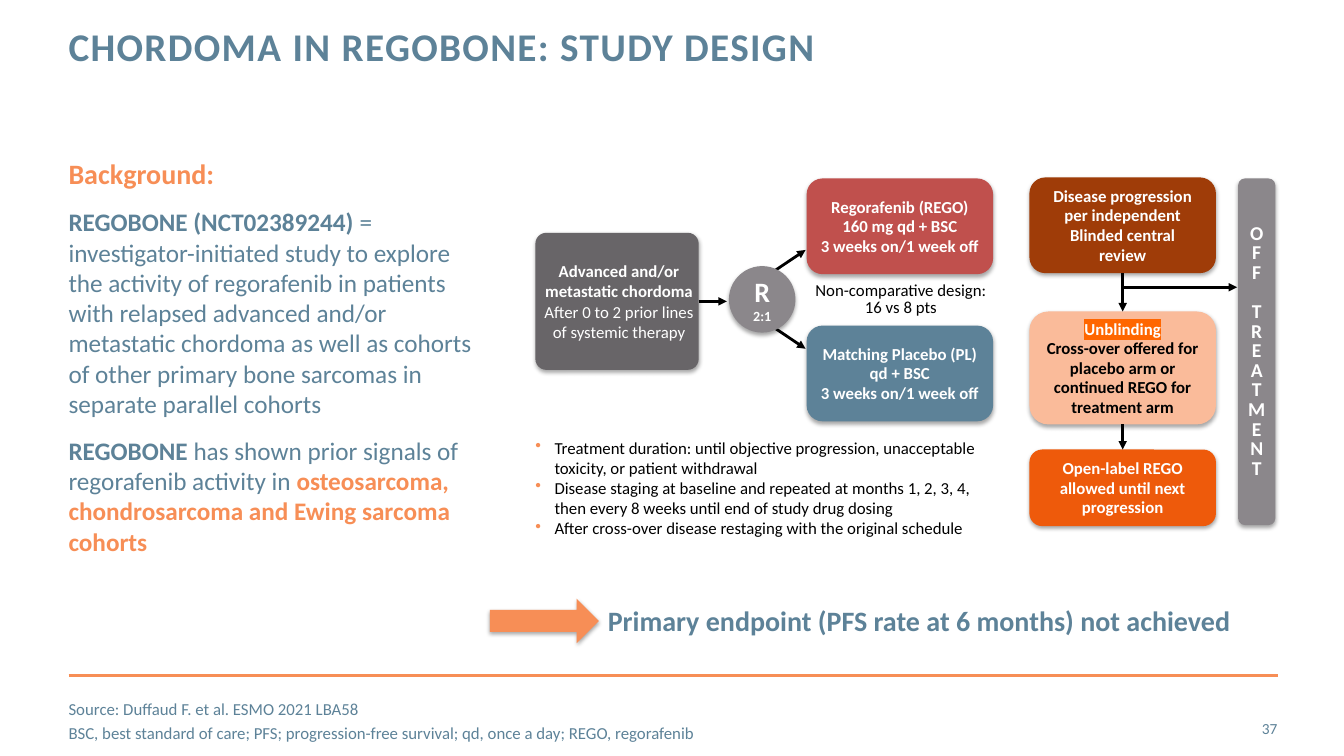
from dataclasses import dataclass

from lxml import etree
from pptx import Presentation
from pptx.dml.color import RGBColor
from pptx.enum.shapes import MSO_CONNECTOR, MSO_SHAPE
from pptx.enum.text import MSO_ANCHOR, PP_ALIGN
from pptx.oxml.ns import qn
from pptx.util import Inches, Pt

STRAIGHT = MSO_CONNECTOR.STRAIGHT
ROUNDED = MSO_SHAPE.ROUNDED_RECTANGLE
OVAL = MSO_SHAPE.OVAL
RIGHT_ARROW = MSO_SHAPE.RIGHT_ARROW
MIDDLE = MSO_ANCHOR.MIDDLE
CENTER = PP_ALIGN.CENTER
RIGHT = PP_ALIGN.RIGHT
TOP_SIDE, BOTTOM_SIDE, RIGHT_SIDE = 0, 2, 3


@dataclass(frozen=True)
class Theme:
    font: str = "Calibri"
    slate: str = "5D8298"
    orange: str = "F78E56"
    red: str = "C0504D"
    gray: str = "8B878B"
    dark_gray: str = "686568"
    rust: str = "9F3C08"
    peach: str = "FABB9A"
    vivid: str = "EE5A0B"
    highlight: str = "FF6600"
    white: str = "FFFFFF"
    black: str = "000000"
    title: int = 28
    heading: int = 20
    body: int = 18
    letter: int = 14
    label: int = 12
    page: int = 11
    ratio: int = 10


THEME = Theme()
NO_INSETS = (0, 0, 0, 0)
BOX_LINES = {"alignment": CENTER, "line_spacing": Pt(14)}
BOLD_WHITE = {"size": THEME.label, "color": THEME.white, "bold": True}


def apply(target, values):
    for name, value in values.items():
        setattr(target, name, value)


def add_color(parent, tag, color, **attributes):
    holder = etree.SubElement(parent, qn(tag), **attributes)
    return etree.SubElement(holder, qn("a:srgbClr"), val=color)


def add_run(paragraph, text, size, color, bold=False, highlight=None, tracking=None):
    for index, line in enumerate(text.split("\n")):
        if index:
            paragraph.add_line_break()
            line_break = paragraph._p.findall(qn("a:br"))[-1]
            etree.SubElement(line_break, qn("a:rPr"), sz=str(size * 100))
        if not line:
            continue
        run = paragraph.add_run()
        run.text = line
        run.font.color.rgb = RGBColor.from_string(color)
        properties = run.font._element
        if highlight:
            add_color(properties, "a:highlight", highlight)
        if tracking:
            properties.set("spc", str(tracking * 100))
        apply(run.font, {"size": Pt(size), "bold": bold, "name": THEME.font})


def add_bullet(paragraph):
    properties = paragraph._p.get_or_add_pPr()
    indent = Inches(0.19)
    properties.set("marL", str(indent))
    properties.set("indent", str(-indent))
    add_color(properties, "a:buClr", THEME.orange)
    etree.SubElement(properties, qn("a:buChar"), char="•")


def write(frame, paragraphs, style, layout=None, gap=0, insets=None, bullets=False, **frame_format):
    apply(frame, {"word_wrap": True, **frame_format})
    if insets is not None:
        sides = ("margin_left", "margin_top", "margin_right", "margin_bottom")
        apply(frame, {side: Inches(inset) for side, inset in zip(sides, insets)})
    for index, runs in enumerate(paragraphs):
        paragraph = frame.add_paragraph() if index else frame.paragraphs[0]
        if bullets:
            add_bullet(paragraph)
        apply(paragraph, layout or {})
        if index and gap:
            paragraph.space_before = Pt(gap)
        for text, changes in runs:
            add_run(paragraph, text, **{**style, **changes})


def plain(*texts):
    return [[(text, {})] for text in texts]


def add_text(slide, at, paragraphs, style, **options):
    box = slide.shapes.add_textbox(*map(Inches, at))
    write(box.text_frame, paragraphs, style, **options)


def add_block(slide, kind, at, fill, corner=None):
    block = slide.shapes.add_shape(kind, *map(Inches, at))
    block.fill.solid()
    block.fill.fore_color.rgb = RGBColor.from_string(fill)
    block.line.fill.background()
    block.shadow.inherit = False
    if corner is not None:
        block.adjustments[0] = corner
    effects = block._element.spPr.find(qn("a:effectLst"))
    shade = add_color(effects, "a:outerShdw", THEME.black, blurRad=str(Pt(3.1)),
                      dist=str(Pt(1.8)), dir="5400000", rotWithShape="0")
    etree.SubElement(shade, qn("a:alpha"), val="35000")
    return block


def add_step(slide, at, fill, paragraphs, corner=None, layout=BOX_LINES, insets=NO_INSETS,
             style=BOLD_WHITE, kind=ROUNDED, gap=0):
    step = add_block(slide, kind, at, fill, corner)
    write(step.text_frame, paragraphs, style, layout=layout, gap=gap, insets=insets,
          vertical_anchor=MIDDLE)
    return step


def add_line(slide, start, end, color=THEME.black, arrow=True):
    line = slide.shapes.add_connector(STRAIGHT, *map(Inches, (*start, *end)))
    line.line.color.rgb = RGBColor.from_string(color)
    line.line.width = Pt(2)
    if arrow:
        etree.SubElement(line.line._get_or_add_ln(), qn("a:tailEnd"), type="triangle")
    etree.SubElement(line._element.spPr, qn("a:effectLst"))
    return line


def add_background(slide):
    slate_body = {"size": THEME.body, "color": THEME.slate}
    strong = {"bold": True}
    accent = {"color": THEME.orange, "bold": True}
    add_text(slide, (0.68, 0.27, 9.56, 0.88), plain("CHORDOMA IN REGOBONE: STUDY DESIGN"),
             {"size": THEME.title, "color": THEME.slate, "bold": True, "tracking": 1},
             layout={"line_spacing": Pt(30)}, insets=NO_INSETS)
    add_text(slide, (0.68, 1.55, 4.02, 4.95), [
        [("Background:", {"size": THEME.heading, **accent})],
        [("REGOBONE (NCT02389244)", strong),
         (" = investigator-initiated study to explore the activity of regorafenib in patients "
          "with relapsed advanced and/or metastatic chordoma as well as cohorts of other "
          "primary bone sarcomas in separate parallel cohorts", {})],
        [("REGOBONE", strong),
         (" has shown prior signals of regorafenib activity in ", {}),
         ("osteosarcoma, chondrosarcoma and Ewing sarcoma cohorts", accent)],
    ], slate_body, gap=12, insets=NO_INSETS)


def add_randomisation(slide):
    for target_y in (2.48, 3.46):
        add_line(slide, (7.26, 2.97), (7.99, target_y))
    add_step(slide, (7.23, 2.64, 0.66, 0.66), THEME.gray,
             [[("R\n", {"size": THEME.heading}), ("2:1", {"size": THEME.ratio})]],
             kind=OVAL, layout={"alignment": CENTER}, insets=None)
    patients = add_step(
        slide, (5.31, 2.31, 1.62, 1.36), THEME.dark_gray,
        [[("Advanced and/or metastatic chordoma\n", {}),
          ("After 0 to 2 prior lines of systemic therapy", {"bold": False})]],
        corner=0.08, layout={"alignment": CENTER}, insets=(0.04, 0, 0, 0))
    add_line(slide, (6.93, 2.99), (7.21, 2.99)).begin_connect(patients, RIGHT_SIDE)
    arms = (
        (1.77, THEME.red, "Regorafenib (REGO)\n160 mg qd + BSC\n3 weeks on/1 week off"),
        (3.23, THEME.slate, "Matching Placebo (PL)\nqd + BSC\n3 weeks on/1 week off"),
    )
    for top, fill, text in arms:
        add_step(slide, (8, top, 1.85, 0.95), fill, plain(text))
    black_label = {"size": THEME.label, "color": THEME.black}
    add_text(slide, (7.96, 2.76, 1.95, 0.45), plain("Non-comparative design:\n16 vs 8 pts"),
             black_label, layout={"alignment": CENTER, "line_spacing": 0.85}, word_wrap=False)
    add_text(slide, (5.31, 4.29, 4.54, 1.11), plain(
        "Treatment duration: until objective progression, unacceptable toxicity, "
        "or patient withdrawal",
        "Disease staging at baseline and repeated at months 1, 2, 3, 4, "
        "then every 8 weeks until end of study drug dosing",
        "After cross-over disease restaging with the original schedule",
    ), black_label, bullets=True, insets=(0, 0.05, 0.1, 0.05))


def add_follow_up(slide):
    stages = (
        (1.76, 0.95, THEME.rust,
         plain("Disease progression\nper independent", "Blinded central\nreview")),
        (3.09, 1.12, THEME.peach,
         [[("Unblinding", {"highlight": THEME.highlight}),
           ("\nCross-over offered for\nplacebo arm or\ncontinued REGO for\ntreatment arm",
            {"color": THEME.black})]]),
        (4.46, 0.76, THEME.vivid, plain("Open-label REGO\nallowed until next\nprogression")),
    )
    steps = [add_step(slide, (10.21, top, 1.85, height), fill, text)
             for top, height, fill, text in stages]
    for earlier, later in zip(steps, steps[1:]):
        arrow = add_line(slide, (0, 0), (0, 0))
        arrow.begin_connect(earlier, BOTTOM_SIDE)
        arrow.end_connect(later, TOP_SIDE)
    add_line(slide, (11.14, 2.85), (12.27, 2.85))
    off_treatment = add_step(slide, (12.28, 1.77, 0.37, 3.44), THEME.gray,
                             plain(*"OFFTREATMENT"), corner=0.19,
                             style={**BOLD_WHITE, "size": THEME.letter})
    off_treatment.text_frame.paragraphs[len("OFF")].space_before = Pt(14)


def add_conclusion(slide):
    add_block(slide, RIGHT_ARROW, (4.86, 5.94, 1.08, 0.44), THEME.orange)
    add_text(slide, (5.93, 5.94, 6.43, 0.44),
             plain("Primary endpoint (PFS rate at 6 months) not achieved"),
             {"size": THEME.heading, "color": THEME.slate, "bold": True}, word_wrap=False)


def add_footer(slide):
    add_line(slide, (0.68, 6.7), (12.68, 6.7), THEME.orange, arrow=False)
    add_text(slide, (0.68, 6.95, 8.88, 0.4), plain(
        "Source: Duffaud F. et al. ESMO 2021 LBA58",
        "BSC, best standard of care; PFS; progression-free survival; qd, once a day; "
        "REGO, regorafenib",
    ), {"size": THEME.label, "color": THEME.slate}, gap=3, insets=NO_INSETS,
        vertical_anchor=MIDDLE)
    add_text(slide, (11.81, 7.03, 0.86, 0.4), plain("37"),
             {"size": THEME.page, "color": THEME.slate}, layout={"alignment": RIGHT},
             insets=NO_INSETS, vertical_anchor=MIDDLE)


def main():
    deck = Presentation()
    apply(deck, {"slide_width": Inches(13.33), "slide_height": Inches(7.5)})
    slide = deck.slides.add_slide(deck.slide_layouts[6])
    for add_section in (add_background, add_randomisation, add_follow_up, add_conclusion, add_footer):
        add_section(slide)
    deck.save("out.pptx")


if __name__ == "__main__":
    main()
